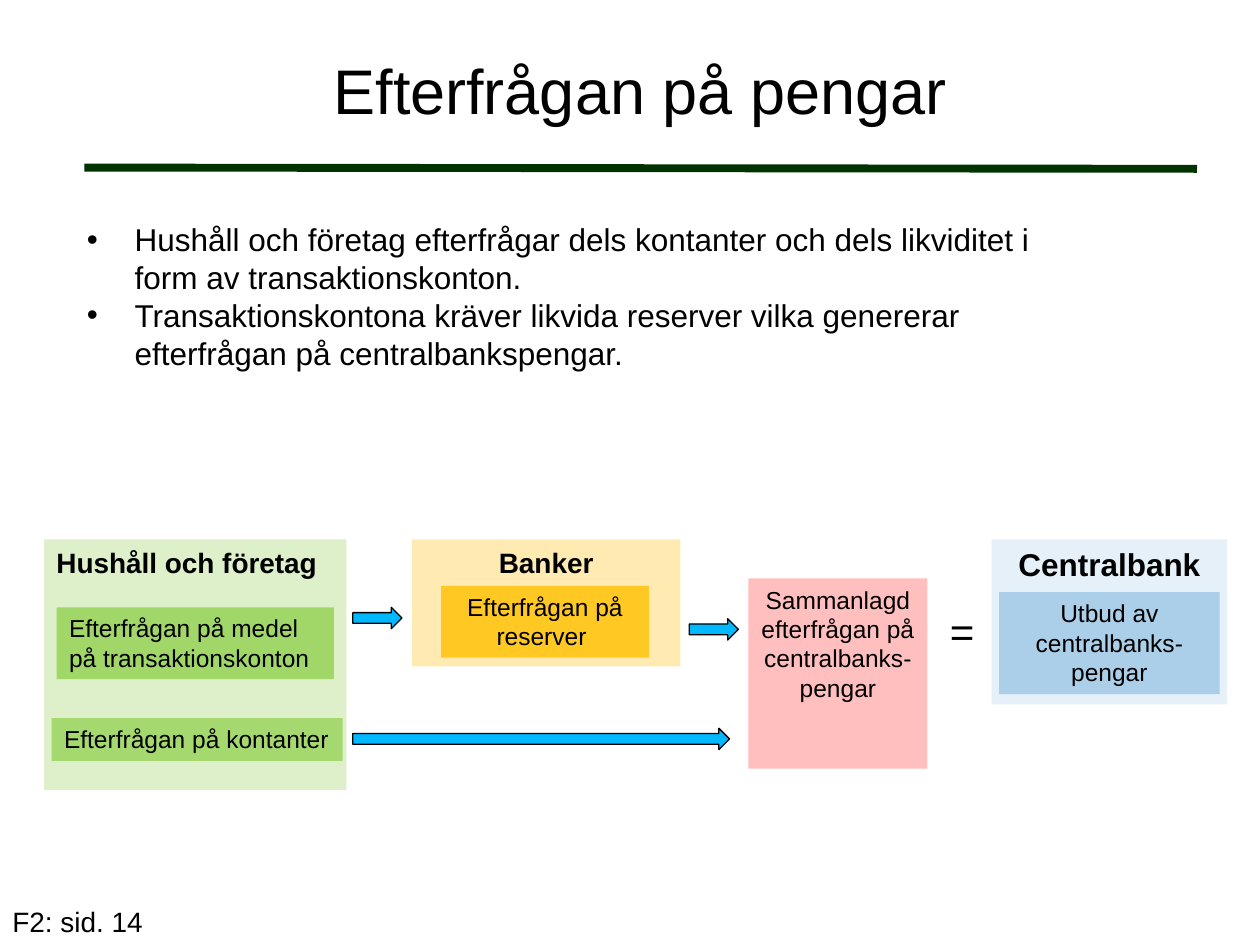
from pptx import Presentation
from pptx.dml.color import RGBColor
from pptx.enum.shapes import MSO_CONNECTOR as LINK, MSO_SHAPE as KIND
from pptx.enum.text import MSO_ANCHOR as ANCHOR, PP_ALIGN as ALIGN
from pptx.oxml.ns import qn
from pptx.util import Inches, Pt
from lxml.etree import SubElement

BLACK = RGBColor(0, 0, 0)
PINE = RGBColor(0x00, 0x33, 0x00)
GREEN = RGBColor(0x92, 0xD0, 0x50)
GOLD = RGBColor(0xFF, 0xC0, 0x00)
BLUE = RGBColor(0x00, 0x70, 0xC0)
RED = RGBColor(0xFF, 0x00, 0x00)
SKY = RGBColor(0x00, 0xB8, 0xFF)
LEFT, MID = ALIGN.LEFT, ALIGN.CENTER

prs = Presentation()
prs.slide_width, prs.slide_height = Inches(10), Inches(7.5)
slide = prs.slides.add_slide(prs.slide_layouts[6])
shapes = slide.shapes


def write(shape, lines, size, align=LEFT, bold=False, wrap=True):
    frame = shape.text_frame
    frame.word_wrap = wrap
    frame.vertical_anchor = ANCHOR.TOP
    frame.text = "\n".join(lines)
    for para in frame.paragraphs:
        para.alignment = align
        para.font.name = "Arial"
        para.font.size = Pt(size)
        para.font.bold = bold
        para.font.color.rgb = BLACK
    return frame


def label(box, lines, size, align=LEFT, wrap=True):
    text = shapes.add_textbox(*map(Inches, box))
    return write(text, lines, size, align, wrap=wrap)


rule = shapes.add_connector(LINK.STRAIGHT, Inches(0.67), Inches(1.33), Inches(9.5), Inches(1.34))
rule.line.color.rgb = PINE
rule.line.width = Pt(4.5)
SubElement(rule._element.spPr, qn("a:effectLst"))

label((0, 7.13, 2.08, 0.37), ["F2: sid. 14"], 16)
title = label((1.62, 0.06, 6.92, 1.3), ["Efterfrågan på pengar"], 36, MID)
title.vertical_anchor = ANCHOR.MIDDLE

boxes = [
    ((0.35, 4.28, 2.4, 1.99), GREEN, 30, "Hushåll och företag", 16, LEFT),
    ((0.45, 4.82, 2.2, 0.57), GREEN, 80, "Efterfrågan på medel på transaktionskonton", 14, LEFT),
    ((0.41, 5.7, 2.31, 0.34), GREEN, 75, "Efterfrågan på kontanter", 14, LEFT),
    ((3.27, 4.28, 2.13, 1.01), GOLD, 30, "Banker", 16, MID),
    ((3.5, 4.65, 1.65, 0.57), GOLD, 80, "Efterfrågan på reserver ", 14, MID),
    ((7.87, 4.28, 1.87, 1.31), BLUE, 10, "Centralbank", 18, MID),
    ((7.93, 4.7, 1.75, 0.81), BLUE, 25, "Utbud av centralbanks-pengar", 14, MID),
    ((5.94, 4.59, 1.42, 1.51), RED, 25, "Sammanlagd efterfrågan på centralbanks-pengar", 14, MID),
]
for box, color, alpha, text, size, align in boxes:
    rect = shapes.add_shape(KIND.RECTANGLE, *map(Inches, box))
    rect.shadow.inherit = False
    rect.fill.solid()
    rect.fill.fore_color.rgb = color
    tint = rect._element.spPr.find(qn("a:solidFill"))[0]
    SubElement(tint, qn("a:alpha"), val=str(alpha * 1000))
    rect.line.fill.background()
    write(rect, [text], size, align, bold=size > 14, wrap="kontanter" not in text)

for left, top, width in [(2.8, 4.82, 0.39), (2.8, 5.78, 2.99), (5.47, 4.91, 0.39)]:
    arrow = shapes.add_shape(KIND.RIGHT_ARROW, Inches(left), Inches(top), Inches(width), Inches(0.17))
    arrow.shadow.inherit = False
    arrow.fill.solid()
    arrow.fill.fore_color.rgb = SKY
    arrow.line.color.rgb = BLACK
    arrow.line.width = Pt(0.75)

label((7.44, 4.76, 0.4, 0.5), ["="], 24, wrap=False)

points = [
    "Hushåll och företag efterfrågar dels kontanter och dels likviditet i form av transaktionskonton.",
    "Transaktionskontona kräver likvida reserver vilka genererar efterfrågan på centralbankspengar.",
]
body = label((0.59, 1.7, 8.11, 1.31), points, 18)
for para in body.paragraphs:
    props = para._p.get_or_add_pPr()
    props.set("marL", str(Inches(0.38)))
    props.set("indent", str(-Inches(0.38)))
    bullet = props.makeelement(qn("a:buChar"), {"char": "•"})
    props.insert(0, bullet)
    face = props.makeelement(qn("a:buFont"), {"typeface": "Arial"})
    props.insert(0, face)

prs.save("out.pptx")
